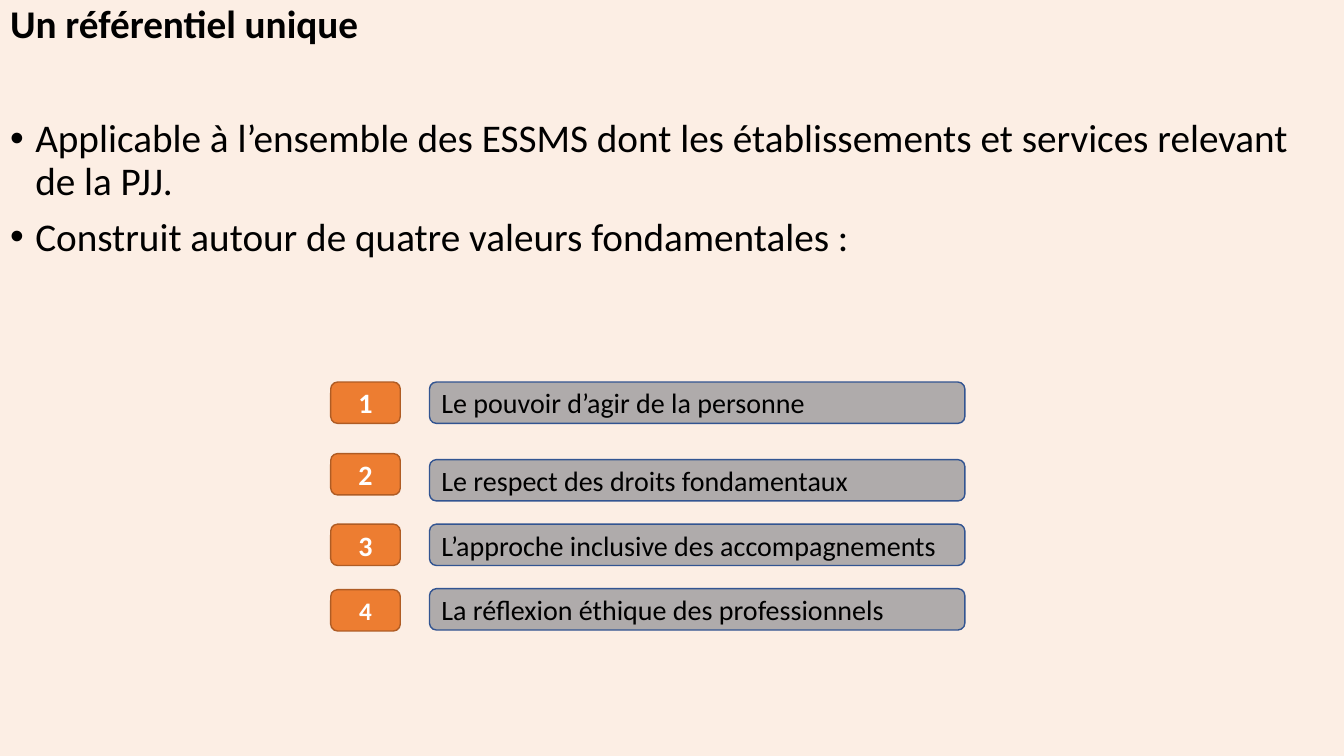
from pptx import Presentation
from pptx.dml.color import RGBColor
from pptx.enum import shapes, text
from pptx.util import Inches, Pt

TITLE = "Un référentiel unique"
POINTS = [
    "Applicable à l’ensemble des ESSMS dont les établissements et services relevant de la PJJ.",
    "Construit autour de quatre valeurs fondamentales :",
]
# Value, top of its number, top of its label, size of its number
VALUES = [
    ("Le pouvoir d’agir de la personne", 3.79, 3.79, 20),
    ("Le respect des droits fondamentaux", 4.5, 4.56, 20),
    ("L’approche inclusive des accompagnements", 5.2, 5.2, 20),
    ("La réflexion éthique des professionnels", 5.85, 5.84, 18),
]


class Theme:
    font = "Calibri"
    paper, ink, white = "FCEEE4", "000000", "FFFFFF"
    orange, orange_line = "ED7D31", "AF5C24"
    grey, blue_line = "AFABAB", "325491"
    heading, label = 28, 20


SLIDE_WIDTH, SLIDE_HEIGHT = 13.33, 7.5
TITLE_HEIGHT, POINTS_TOP = 0.55, 1.18
NUMBER_LEFT, NUMBER_WIDTH = 3.28, 0.69
LABEL_LEFT, LABEL_WIDTH = 4.26, 5.31
ROW_HEIGHT = 0.41


def apply(target, values):
    for name, value in values.items():
        setattr(target, name, value)


def place(shape, left, top, width, height):
    apply(shape, {"left": Inches(left), "top": Inches(top),
                  "width": Inches(width), "height": Inches(height)})


def paint(shape, color):
    shape.fill.solid()
    shape.fill.fore_color.rgb = RGBColor.from_string(color)


def write(frame, lines, size, color, bold=False, frame_format=None, para_format=None):
    apply(frame, {"word_wrap": True, "auto_size": text.MSO_AUTO_SIZE.NONE,
                  **(frame_format or {})})
    for index, line in enumerate(lines):
        para = frame.add_paragraph() if index else frame.paragraphs[0]
        apply(para, para_format or {})
        span = para.add_run()
        span.text = line
        apply(span.font, {"name": Theme.font, "size": Pt(size), "bold": bold})
        span.font.color.rgb = RGBColor.from_string(color)


def add_tile(page, line, left, top, width, fill, outline, size, color, align, bold=False):
    box = page.shapes.add_shape(shapes.MSO_SHAPE.ROUNDED_RECTANGLE, Inches(left),
                                Inches(top), Inches(width), Inches(ROW_HEIGHT))
    box.shadow.inherit = False
    paint(box, fill)
    box.line.color.rgb = RGBColor.from_string(outline)
    box.line.width = Pt(1)
    write(box.text_frame, [line], size, color, bold,
          {"vertical_anchor": text.MSO_ANCHOR.MIDDLE}, {"alignment": align})


def add_heading_and_points(page):
    title, body = page.shapes.title, page.placeholders[1]
    title._element.addprevious(body._element)  # the filled body lies behind the title
    top_anchor = {"vertical_anchor": text.MSO_ANCHOR.TOP}
    spacing = {"line_spacing": 0.9, "space_before": Pt(10),
               "alignment": text.PP_ALIGN.LEFT}

    place(title, 0, 0, SLIDE_WIDTH, TITLE_HEIGHT)
    write(title.text_frame, [TITLE], Theme.heading, Theme.ink, True,
          top_anchor, {**spacing, "space_before": Pt(0)})

    place(body, 0, 0, SLIDE_WIDTH, SLIDE_HEIGHT)
    paint(body, Theme.paper)
    write(body.text_frame, POINTS, Theme.heading, Theme.ink, False,
          {**top_anchor, "margin_top": Inches(POINTS_TOP)}, spacing)
    for para in body.text_frame.paragraphs:
        indent = Inches(0.25)
        properties = para._p.get_or_add_pPr()
        properties.set("marL", str(indent))
        properties.set("indent", str(-indent))


def main():
    deck = Presentation()
    deck.slide_width, deck.slide_height = Inches(SLIDE_WIDTH), Inches(SLIDE_HEIGHT)
    page = deck.slides.add_slide(deck.slide_layouts[1])
    add_heading_and_points(page)
    for number, (value, number_top, label_top, number_size) in enumerate(VALUES, 1):
        add_tile(page, str(number), NUMBER_LEFT, number_top, NUMBER_WIDTH,
                 Theme.orange, Theme.orange_line, number_size, Theme.white,
                 text.PP_ALIGN.CENTER, bold=True)
        add_tile(page, value, LABEL_LEFT, label_top, LABEL_WIDTH,
                 Theme.grey, Theme.blue_line, Theme.label, Theme.ink,
                 text.PP_ALIGN.JUSTIFY)
    deck.save("out.pptx")


if __name__ == "__main__":
    main()
